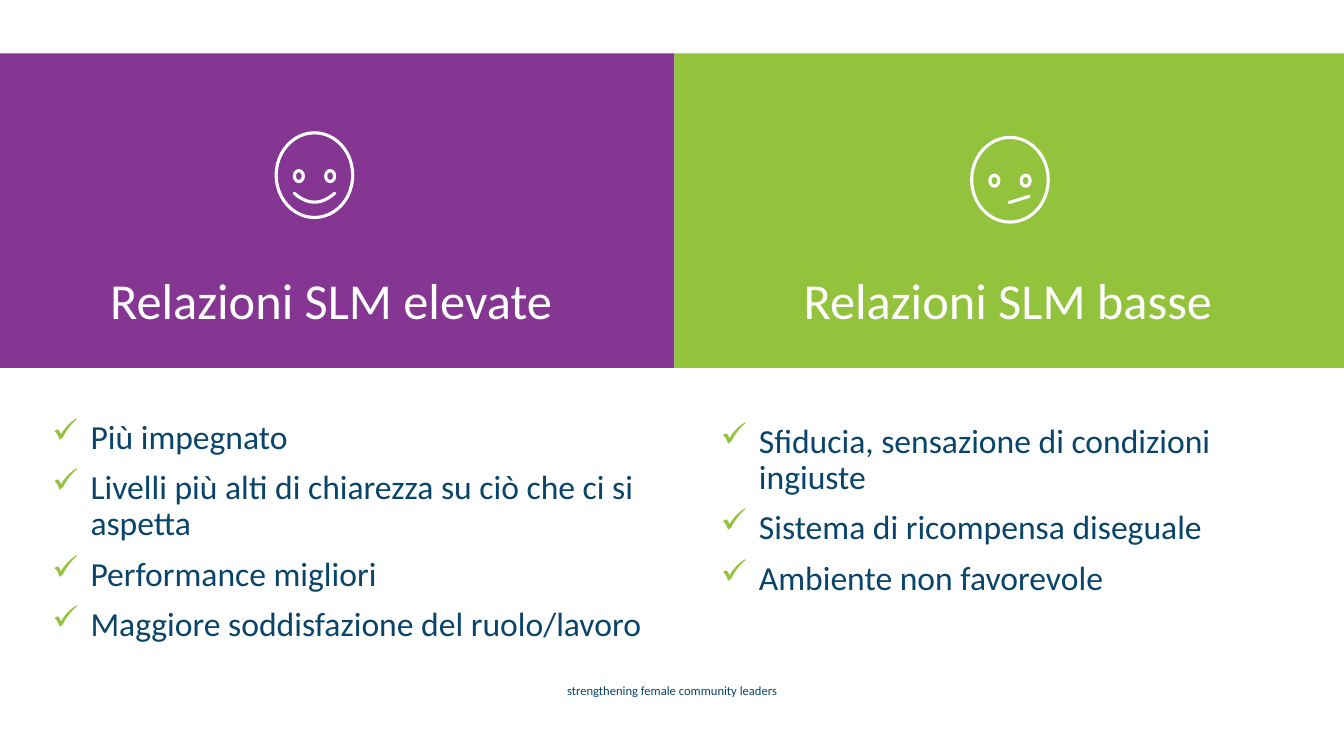
from lxml.etree import SubElement
from pptx import Presentation
from pptx.dml.color import RGBColor
from pptx.enum.shapes import MSO_SHAPE as Shape
from pptx.enum.text import MSO_ANCHOR as Anchor, PP_ALIGN as Align
from pptx.oxml.ns import qn
from pptx.util import Inches, Pt

SLIDE_W, SLIDE_H = Inches(13.333), Inches(7.5)
PURPLE, GREEN, NAVY, WHITE = "853693", "93C23D", "09446A", "FFFFFF"
PANEL_W, FACE_W, FACE_H = 50.18, 5.7, 11.2
EYE_W, EYE_H, EYE_INSET, EYE_DROP = 0.67, 1.45, 1.35, 5
SMILE = [(2.85 + 1.5 * step / 8, 8 + 1.17 * (1 - (step / 8) ** 2))
         for step in range(-8, 9)]
SMIRK = [(2.78, 8.62), (4.28, 7.8)]


def color(value):
    """Turn a hex string into a colour."""
    return RGBColor.from_string(value)


def place(left, top, *size):
    """Turn percentages of the slide into lengths, across and down in turn."""
    sides = (SLIDE_W, SLIDE_H, SLIDE_W, SLIDE_H)
    return [round(side * share / 100)
            for side, share in zip(sides, (left, top, *size))]


def add_panel(slide, left, fill):
    """Add one coloured heading panel."""
    panel = slide.shapes.add_shape(
        Shape.RECTANGLE, *place(left, 7.07, PANEL_W, 41.6))
    panel.shadow.inherit = False
    panel.fill.solid()
    panel.fill.fore_color.rgb = color(fill)
    panel.line.fill.background()


def outline(stroke):
    """Leave a shape unfilled with a round-ended white line."""
    stroke.shadow.inherit = False
    stroke.fill.background()
    stroke.line.color.rgb = color(WHITE)
    stroke.line.width = Pt(2.25)
    stroke._element.spPr.find(qn("a:ln")).set("cap", "rnd")


def add_face(slide, left, top, mouth):
    """Draw a head, two mirrored eyes and a mouth."""
    ovals = [(0, 0, FACE_W, FACE_H)]
    for eye in (EYE_INSET, FACE_W - EYE_INSET - EYE_W):
        ovals.append((eye, EYE_DROP, EYE_W, EYE_H))
    for across, down, width, height in ovals:
        outline(slide.shapes.add_shape(
            Shape.OVAL, *place(left + across, top + down, width, height)))
    start, *others = [place(left + x, top + y) for x, y in mouth]
    pen = slide.shapes.build_freeform(*start)
    pen.add_line_segments(others, close=False)
    outline(pen.convert_to_shape())


def add_check(paragraph):
    """Give a paragraph a green check mark and a hanging indent."""
    props = paragraph._p.get_or_add_pPr()
    props.set("marL", str(Inches(0.38)))
    props.set("indent", str(-Inches(0.38)))
    tint = SubElement(props, qn("a:buClr"))
    SubElement(tint, qn("a:srgbClr")).set("val", GREEN)
    SubElement(props, qn("a:buChar")).set("char", "✓")


def add_text(slide, box, lines, size, ink, spacing=1.0, checked=False):
    """Add a text box, either centred or as a checklist."""
    frame = slide.shapes.add_textbox(*place(*box)).text_frame
    frame.word_wrap = True
    frame.vertical_anchor = Anchor.TOP
    frame.text = "\n".join(lines)
    for index, paragraph in enumerate(frame.paragraphs):
        paragraph.line_spacing = spacing
        paragraph.space_before = Pt(10 if index else 0)
        paragraph.alignment = Align.LEFT if checked else Align.CENTER
        if checked:
            add_check(paragraph)
        font = paragraph.runs[0].font
        font.name, font.size = "Calibri", Pt(size)
        font.color.rgb = color(ink)


def main():
    """Build the slide comparing high and low SLM relations."""
    deck = Presentation()
    deck.slide_width, deck.slide_height = SLIDE_W, SLIDE_H
    slide = deck.slides.add_slide(deck.slide_layouts[6])

    add_panel(slide, 0, PURPLE)
    add_panel(slide, PANEL_W, GREEN)
    add_text(slide, (0, 89.73, 100, 3.33),
             ["strengthening female community leaders"], 9, NAVY)

    add_text(slide, (3.15, 54.93, 46.13, 39.6), [
        "Più impegnato",
        "Livelli più alti di chiarezza su ciò che ci si aspetta",
        "Performance migliori",
        "Maggiore soddisfazione del ruolo/lavoro",
    ], 24, NAVY, 0.9, checked=True)
    add_text(slide, (0, 36.53, 49.28, 8.53),
             ["Relazioni SLM elevate"], 36, WHITE, 0.8)
    add_text(slide, (52.88, 55.47, 44.03, 24.53), [
        "Sfiducia, sensazione di condizioni ingiuste",
        "Sistema di ricompensa diseguale",
        "Ambiente non favorevole",
    ], 24, NAVY, 0.9, checked=True)
    add_text(slide, (50, 36.53, 50, 8.53),
             ["Relazioni SLM basse"], 36, WHITE, 0.8)

    add_face(slide, 72.3, 18.18, SMIRK)
    add_face(slide, 20.55, 17.57, SMILE)
    deck.save("out.pptx")


if __name__ == "__main__":
    main()
